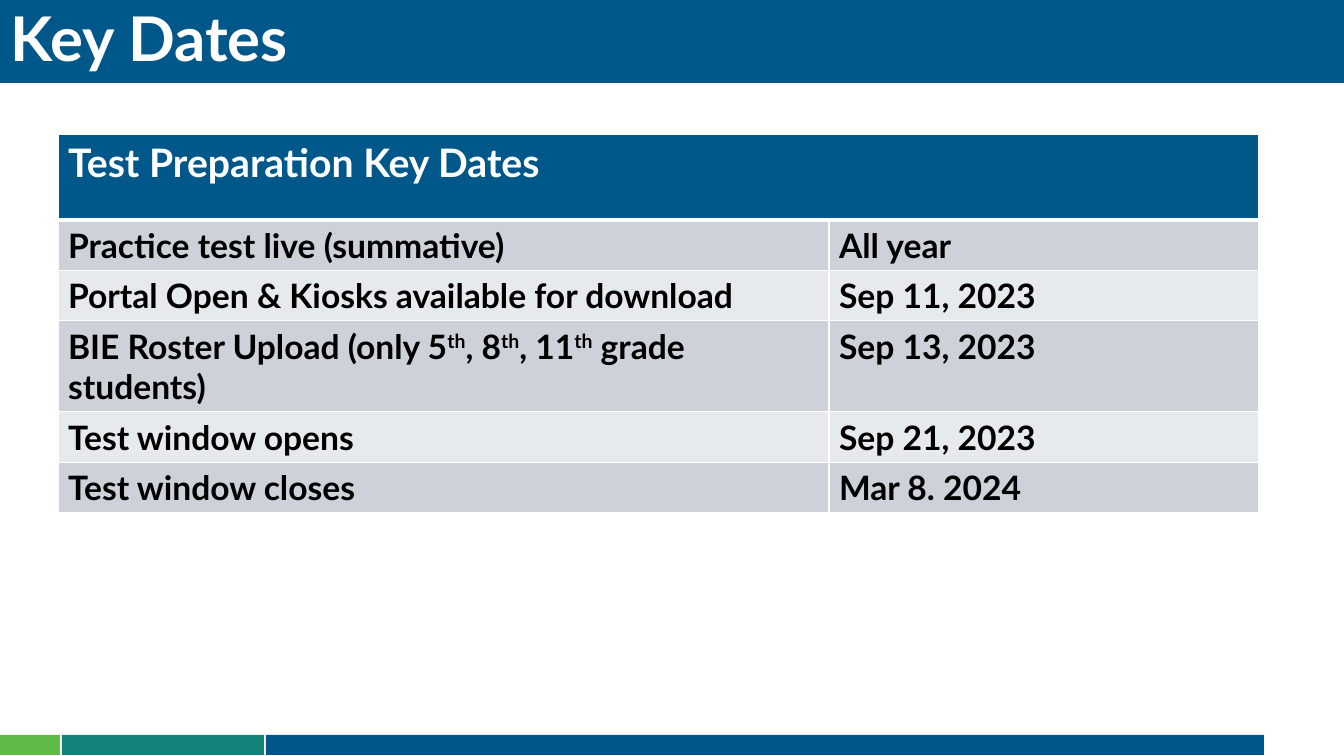
import lxml.etree
import pptx
import pptx.dml.color
import pptx.enum.shapes
import pptx.enum.text
import pptx.oxml.ns
import pptx.util

SCALE = 914400 / 100.8
COLORS = {
    "white": "FFFFFF", "black": "000000", "blue": "005789", "footer": "005689",
    "green": "60BB46", "teal": "128379", "dark_row": "CCD1DA", "light_row": "E7EAED",
}
FOOTER_BARS = [(0, 60, "green"), (62, 202, "teal"), (266, 998, "footer")]
COLUMNS = [771, 430]
HEADER = "Test Preparation Key Dates"
DATES = [
    (["Practice test live (summative)"], "All year", 50),
    (["Portal Open & Kiosks available for download"], "Sep 11, 2023", 50),
    (["BIE Roster Upload (only 5", "th", ", 8", "th", ", 11", "th", " grade students)"],
     "Sep 13, 2023", 91),
    (["Test window opens"], "Sep 21, 2023", 50),
    (["Test window closes"], "Mar 8. 2024", 50),
]
HEADER_HEIGHT = 86


def px(n):
    return pptx.util.Emu(round(n * SCALE))


def rgb(name):
    return pptx.dml.color.RGBColor.from_string(COLORS[name])


def paint(obj, color):
    obj.fill.solid()
    obj.fill.fore_color.rgb = rgb(color)


def add_run(p, text, size, color):
    r = p.add_run()
    r.text = text
    style = {"name": "Lato", "size": pptx.util.Pt(size), "bold": True}
    for key, value in style.items():
        setattr(r.font, key, value)
    r.font.color.rgb = rgb(color)
    return r


def add_bar(slide, left, width, color):
    rect = pptx.enum.shapes.MSO_SHAPE.RECTANGLE
    sp = slide.shapes.add_shape(rect, px(left), px(735), px(width), px(20))
    sp.shadow.inherit = False
    paint(sp, color)
    sp.line.fill.background()


def add_title(slide, text):
    sp = slide.shapes.title
    box = {"left": 0, "top": 0, "width": 1344, "height": 83}
    for key, value in box.items():
        setattr(sp, key, px(value))
    paint(sp, "blue")
    tf = sp.text_frame
    frame = {
        "word_wrap": True,
        "auto_size": pptx.enum.text.MSO_AUTO_SIZE.NONE,
        "vertical_anchor": pptx.enum.text.MSO_ANCHOR.MIDDLE,
    }
    for key, value in frame.items():
        setattr(tf, key, value)
    p = tf.paragraphs[0]
    p.alignment = pptx.enum.text.PP_ALIGN.LEFT
    p.line_spacing = 0.9
    add_run(p, text, 44, "white")


def set_borders(cell, widths):
    qn = pptx.oxml.ns.qn
    tcPr = cell._tc.get_or_add_tcPr()
    for side, width in widths.items():
        ln = lxml.etree.SubElement(tcPr, qn("a:ln" + side), w=str(pptx.util.Pt(width)))
        fill = lxml.etree.SubElement(ln, qn("a:solidFill"))
        lxml.etree.SubElement(fill, qn("a:srgbClr"), val=COLORS["white"])


def fill_cell(cell, parts, size, color, background, top=1, bottom=1):
    set_borders(cell, {"L": 1, "R": 1, "T": top, "B": bottom})
    paint(cell, background)
    p = cell.text_frame.paragraphs[0]
    for part in parts:
        r = add_run(p, part, size, color)
        if part == "th":
            r._r.get_or_add_rPr().set("baseline", "30000")


def add_dates_table(slide):
    heights = [HEADER_HEIGHT] + [height for _, _, height in DATES]
    frame = slide.shapes.add_table(len(heights), len(COLUMNS), px(58), px(134),
                                   px(sum(COLUMNS)), px(sum(heights)))
    table = frame.table
    table.first_row = table.horz_banding = False
    for column, width in zip(table.columns, COLUMNS):
        column.width = px(width)
    for row, height in zip(table.rows, heights):
        row.height = px(height)

    fill_cell(table.cell(0, 0), [HEADER], 28, "white", "blue", bottom=3)
    fill_cell(table.cell(0, 1), [], 28, "white", "blue", bottom=3)
    table.cell(0, 0).merge(table.cell(0, 1))
    for i, (event, date, _) in enumerate(DATES, 1):
        background = "dark_row" if i % 2 else "light_row"
        top = 3 if i == 1 else 1
        for j, parts in enumerate([event, [date]]):
            fill_cell(table.cell(i, j), parts, 24, "black", background, top=top)


def main():
    prs = pptx.Presentation()
    prs.slide_width, prs.slide_height = px(1344), px(756)
    slide = prs.slides.add_slide(prs.slide_layouts[5])
    for left, width, color in FOOTER_BARS:
        add_bar(slide, left, width, color)
    add_title(slide, "Key Dates")
    add_dates_table(slide)
    prs.save("out.pptx")


if __name__ == "__main__":
    main()
